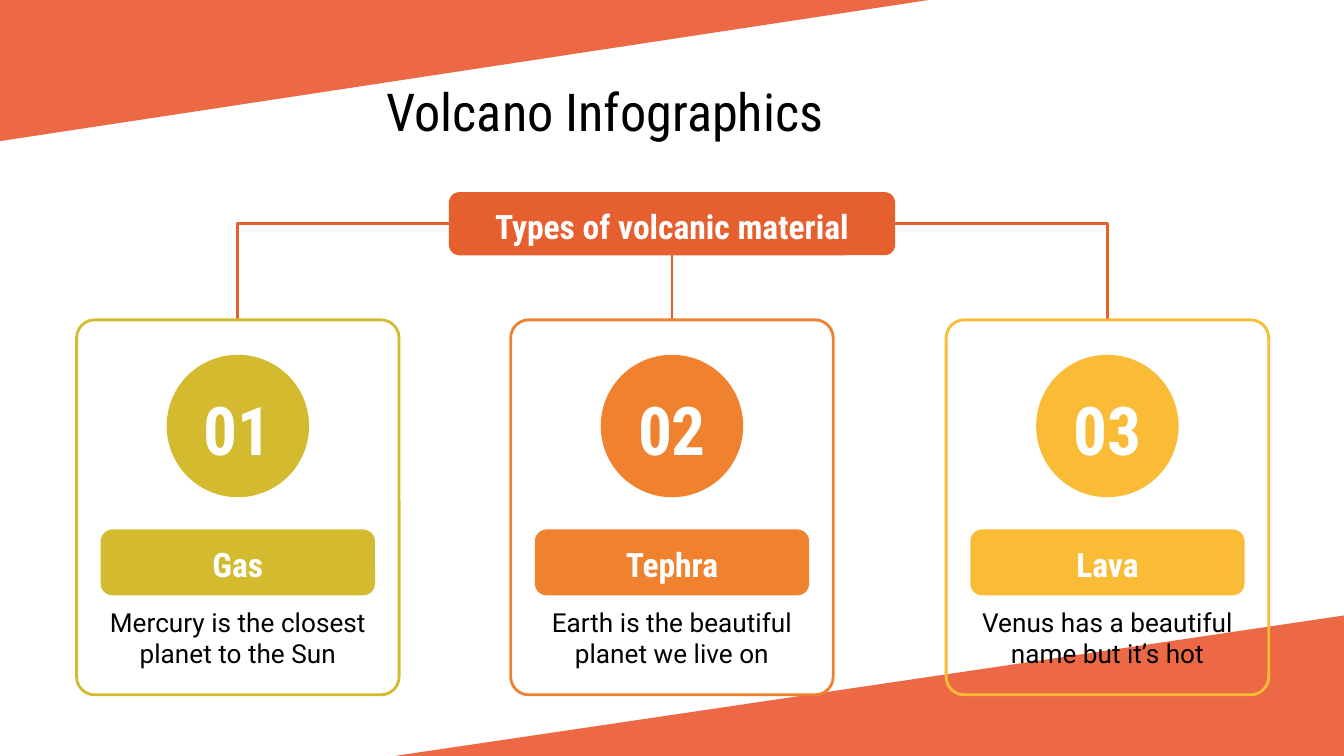
from lxml import etree
from pptx import Presentation
from pptx.dml.color import RGBColor
from pptx.enum.shapes import MSO_CONNECTOR, MSO_SHAPE
from pptx.enum.text import MSO_ANCHOR, MSO_AUTO_SIZE, PP_ALIGN
from pptx.oxml.ns import qn
from pptx.util import Inches, Pt

ELLIPSE = MSO_SHAPE.OVAL
ROUNDED = MSO_SHAPE.ROUNDED_RECTANGLE
STRAIGHT = MSO_CONNECTOR.STRAIGHT
ELBOW = MSO_CONNECTOR.ELBOW
TOP = MSO_ANCHOR.TOP
CENTER = PP_ALIGN.CENTER
NO_AUTOFIT = MSO_AUTO_SIZE.NONE

WIDTH = 10
HEIGHT = WIDTH * 9 / 16
HEADING_FONT, BODY_FONT = "Roboto Condensed", "Roboto"
WHITE, BLACK = "FFFFFF", "000000"
CORNER, HEADER = "ED6945", "E6602F"
LINE_WIDTH = 1.5
CARD_TOP = 2.38
HEADER_TOP, HEADER_WIDTH, BAR_HEIGHT = 1.43, 3.32, 0.47

# centre, colour, number, heading, description
CARDS = [
    (1.77, "D4BA2E", "01", "Gas", "Mercury is the closest planet to the Sun"),
    (5.0, "EF812F", "02", "Tephra", "Earth is the beautiful planet we live on"),
    (8.24, "FABC37", "03", "Lava", "Venus has a beautiful name but it’s hot"),
]


def rgb(color):
    return RGBColor.from_string(color)


def paint(shape, fill=None, line=None):
    shape.shadow.inherit = False
    if fill:
        shape.fill.solid()
        shape.fill.fore_color.rgb = rgb(fill)
    else:
        shape.fill.background()
    if line:
        shape.line.color.rgb = rgb(line)
        shape.line.width = Pt(LINE_WIDTH)
    else:
        shape.line.fill.background()


def add_centered_shape(slide, kind, center, top, width, height,
                       fill=None, line=None, corner=None):
    shape = slide.shapes.add_shape(kind, Inches(center - width / 2), Inches(top),
                                   Inches(width), Inches(height))
    if corner is not None:
        shape.adjustments[0] = corner
    paint(shape, fill, line)


def add_corner(slide, points):
    start, *others = [(Inches(x), Inches(y)) for x, y in points]
    builder = slide.shapes.build_freeform(*start)
    builder.add_line_segments(others, close=True)
    paint(builder.convert_to_shape(), CORNER)


def write(shape, text, size, color, font=HEADING_FONT, bold=False):
    frame = shape.text_frame
    frame.text = text
    frame.word_wrap = True
    frame.auto_size = NO_AUTOFIT
    frame.vertical_anchor = TOP
    frame.margin_left = frame.margin_right = Inches(0.1)
    frame.margin_top = frame.margin_bottom = Inches(0.1)
    paragraph = frame.paragraphs[0]
    paragraph.alignment = CENTER
    run_font = paragraph.runs[0].font
    run_font.name = font
    run_font.size = Pt(size)
    run_font.bold = bold
    run_font.color.rgb = rgb(color)


def add_centered_text(slide, center, top, width, height, text, size, color, **style):
    box = slide.shapes.add_textbox(Inches(center - width / 2), Inches(top),
                                   Inches(width), Inches(height))
    write(box, text, size, color, **style)


def add_branch(slide, kind, start, end):
    """Join the header to a card; an elbow makes a single turn."""
    connector = slide.shapes.add_connector(kind, *map(Inches, start + end))
    connector.line.color.rgb = rgb(HEADER)
    connector.line.width = Pt(LINE_WIDTH)
    properties = connector._element.spPr
    etree.SubElement(properties, qn("a:effectLst"))
    if kind == ELBOW:
        properties.find(qn("a:prstGeom")).set("prst", "bentConnector2")


def add_title(slide, text):
    title = slide.shapes.title
    title.left, title.top = Inches(0), Inches(0.49)
    title.width, title.height = Inches(9), Inches(0.63)
    write(title, text, 28, BLACK)


def add_header(slide):
    center = WIDTH / 2
    middle = HEADER_TOP + BAR_HEIGHT / 2
    add_centered_shape(slide, ROUNDED, center, HEADER_TOP, HEADER_WIDTH, BAR_HEIGHT,
                       fill=HEADER, corner=0.167)
    add_centered_text(slide, center, HEADER_TOP, 2.99, BAR_HEIGHT,
                      "Types of volcanic material", 18, WHITE, bold=True)
    left, _, right = [card[0] for card in CARDS]
    add_branch(slide, ELBOW, (center - HEADER_WIDTH / 2, middle), (left, CARD_TOP))
    add_branch(slide, ELBOW, (center + HEADER_WIDTH / 2, middle), (right, CARD_TOP))
    add_branch(slide, STRAIGHT, (center, HEADER_TOP + BAR_HEIGHT), (center, CARD_TOP))


def add_card(slide, center, color, number, heading, description):
    add_centered_shape(slide, ELLIPSE, center, 2.64, 1.06, 1.06, fill=color)
    add_centered_shape(slide, ROUNDED, center, CARD_TOP, 2.4, 2.79,
                       line=color, corner=0.056)
    add_centered_shape(slide, ROUNDED, center, 3.95, 2.02, BAR_HEIGHT,
                       fill=color, line=color, corner=0.167)
    add_centered_text(slide, center, 3.95, 1.62, BAR_HEIGHT, heading, 18, WHITE, bold=True)
    add_centered_text(slide, center, 4.41, 2.2, 0.57, description, 14, BLACK, font=BODY_FONT)
    add_centered_text(slide, center, 2.79, 1.62, 0.76, number, 36, WHITE, bold=True)


def main():
    presentation = Presentation()
    presentation.slide_width = Inches(WIDTH)
    presentation.slide_height = Inches(HEIGHT)
    slide = presentation.slides.add_slide(presentation.slide_layouts[5])
    add_corner(slide, [(0, 0), (6.91, 0), (0, 1.05)])
    add_corner(slide, [(WIDTH, 4.58), (WIDTH, HEIGHT), (2.94, HEIGHT)])
    add_title(slide, "Volcano Infographics")
    add_header(slide)
    for card in CARDS:
        add_card(slide, *card)
    presentation.save("out.pptx")


if __name__ == "__main__":
    main()
